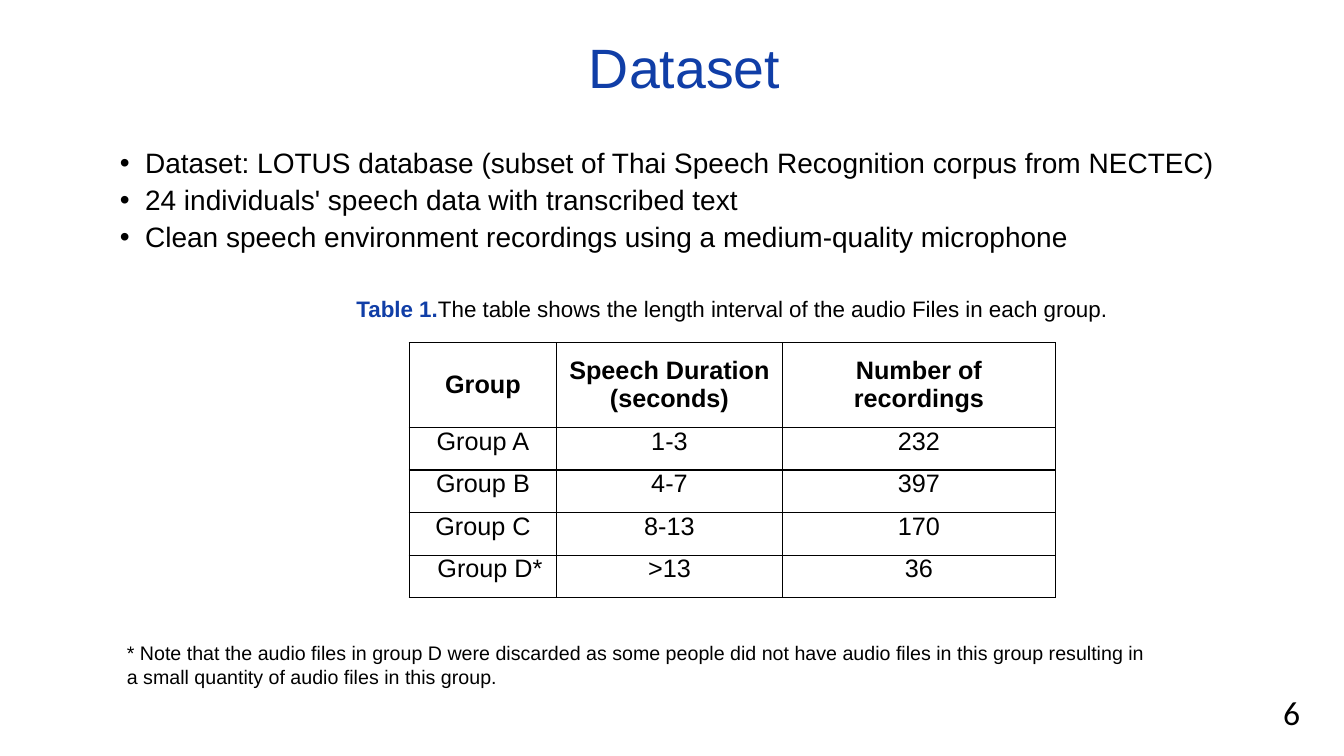
from lxml.etree import SubElement
from pptx import Presentation
from pptx.dml.color import RGBColor
from pptx.enum.shapes import MSO_SHAPE as Preset
from pptx.enum.text import MSO_ANCHOR as Anchor, PP_ALIGN as Align
from pptx.oxml.ns import qn
from pptx.util import Inches, Pt

BLUE = RGBColor(0x10, 0x3E, 0xA7)
BLACK = RGBColor(0, 0, 0)
WHITE = RGBColor(0xFF, 0xFF, 0xFF)

BULLETS = [
    "Dataset: LOTUS database (subset of Thai Speech Recognition corpus from NECTEC)",
    "24 individuals' speech data with transcribed text",
    "Clean speech environment recordings using a medium-quality microphone",
]
ROWS = [
    ("Group", "Speech Duration (seconds)", "Number of recordings"),
    ("Group A", "1-3", "232"),
    ("Group B", "4-7", "397"),
    ("Group C", "8-13", "170"),
    ("Group D*", ">13", "36"),
]
COLUMN_WIDTHS = [1.46, 2.24, 2.71]
TABLE_HEIGHT = 2.53
HEADER_HEIGHT = 0.84
GROUP_HEIGHT = (TABLE_HEIGHT - HEADER_HEIGHT) / (len(ROWS) - 1)


def add_run(paragraph, text, size, color=BLACK, bold=False, font="Arial"):
    run = paragraph.add_run()
    run.text = text
    run.font.name = font
    run.font.size = Pt(size)
    run.font.bold = bold
    run.font.color.rgb = color


def add_text_frame(left, top, width, height, anchor=Anchor.TOP, filled=False):
    """Add a wrapping text box or white rectangle and return its text frame."""
    bounds = [Inches(value) for value in (left, top, width, height)]
    if filled:
        shape = slide.shapes.add_shape(Preset.RECTANGLE, *bounds)
        shape.shadow.inherit = False
        shape.fill.solid()
        shape.fill.fore_color.rgb = WHITE
        shape.line.fill.background()
    else:
        shape = slide.shapes.add_textbox(*bounds)
    shape.text_frame.word_wrap = True
    shape.text_frame.vertical_anchor = anchor
    return shape.text_frame


presentation = Presentation()
presentation.slide_width = Inches(13.33)
presentation.slide_height = Inches(7.5)
slide = presentation.slides.add_slide(presentation.slide_layouts[6])

# Title
title = add_text_frame(1.16, 0.4, 11.26, 0.6, Anchor.MIDDLE).paragraphs[0]
title.alignment = Align.CENTER
title.line_spacing = 0.9
add_run(title, "Dataset", 39.6, BLUE)

# Bullet list
body = add_text_frame(1.09, 1.43, 11.75, 5.73, filled=True)
for index, text in enumerate(BULLETS):
    paragraph = body.add_paragraph() if index else body.paragraphs[0]
    paragraph.alignment = Align.LEFT
    paragraph.line_spacing = 0.9
    paragraph.space_before = Pt(5 if index else 0)
    properties = paragraph._p.get_or_add_pPr()
    properties.set("marL", str(Inches(0.25)))
    properties.set("indent", str(Inches(-0.25)))
    SubElement(properties, qn("a:buFont"), typeface="Arial")
    SubElement(properties, qn("a:buChar"), char="•")
    add_run(paragraph, text, 20)

# Page number
page_number = add_text_frame(12.49, 6.86, 0.64, 0.4, Anchor.MIDDLE).paragraphs[0]
page_number.alignment = Align.CENTER
add_run(page_number, "6", 24, font="Calibri")

# Table caption
caption = add_text_frame(3.42, 2.88, 7.68, 0.37).paragraphs[0]
caption.alignment = Align.CENTER
add_run(caption, "Table 1.", 16, BLUE, bold=True)
add_run(caption, "The table shows the length interval of the audio Files in each group.", 16)

# Table of recordings per group
table = slide.shapes.add_table(
    len(ROWS), len(COLUMN_WIDTHS), Inches(4.06), Inches(3.4),
    Inches(sum(COLUMN_WIDTHS)), Inches(TABLE_HEIGHT)).table
for column, width in zip(table.columns, COLUMN_WIDTHS):
    column.width = Inches(width)

for row_index, values in enumerate(ROWS):
    is_header = row_index == 0
    table.rows[row_index].height = Inches(HEADER_HEIGHT if is_header else GROUP_HEIGHT)
    for column_index, text in enumerate(values):
        cell = table.cell(row_index, column_index)
        cell.margin_left = Inches(0.21 if text == "Group D*" else 0.07)
        cell.margin_right = Inches(0.07)
        cell.margin_top = cell.margin_bottom = Inches(0)
        cell.vertical_anchor = Anchor.MIDDLE if is_header else Anchor.TOP
        properties = cell._tc.get_or_add_tcPr()
        for side in ("lnL", "lnR", "lnT", "lnB"):
            border = SubElement(properties, qn(f"a:{side}"), w=str(Pt(1)))
            border_fill = SubElement(border, qn("a:solidFill"))
            SubElement(border_fill, qn("a:srgbClr"), val=str(BLACK))
        cell.fill.background()
        paragraph = cell.text_frame.paragraphs[0]
        paragraph.alignment = Align.CENTER
        add_run(paragraph, text, 18, bold=is_header)

# Footnote
footnote = add_text_frame(1.16, 6.31, 10.45, 0.57, filled=True).paragraphs[0]
footnote.alignment = Align.LEFT
add_run(footnote, "* Note that the audio files in group D were discarded as some people did not have "
        "audio files in this group resulting in a small quantity of audio files in this group.", 14)

presentation.save("out.pptx")
